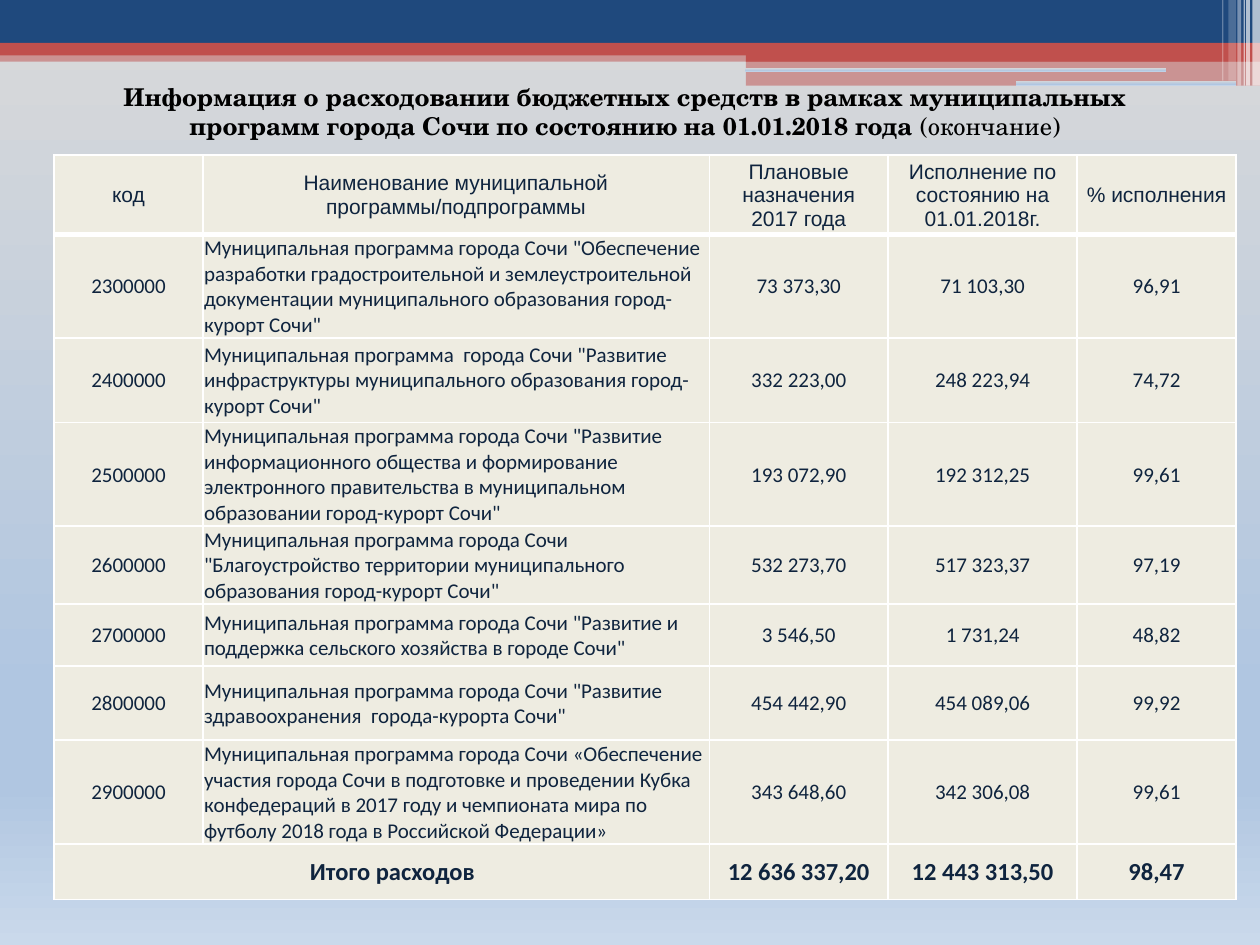
from copy import deepcopy
from typing import NamedTuple

from lxml import etree
from pptx import Presentation
from pptx.dml.color import RGBColor
from pptx.enum import shapes, text
from pptx.oxml.ns import qn
from pptx.util import Inches, Pt

NAVY = RGBColor(0x1F, 0x49, 0x7D)
RED = RGBColor(0xC0, 0x50, 0x4D)
WHITE = RGBColor(0xFF, 0xFF, 0xFF)
BLACK = RGBColor(0, 0, 0)
CREAM = RGBColor(0xEE, 0xEC, 0xE1)
INK = RGBColor(0x0F, 0x24, 0x3E)
SKY = [
    (0, RGBColor(0xD9, 0xD9, 0xD9)),
    (74, RGBColor(0xB0, 0xC6, 0xE1)),
    (83, RGBColor(0xB0, 0xC6, 0xE1)),
    (100, RGBColor(0xCA, 0xD9, 0xEB)),
]
CENTER, LEFT = text.PP_ALIGN.CENTER, text.PP_ALIGN.LEFT


class Band(NamedTuple):
    left: float
    top: float
    width: float
    height: float
    color: RGBColor | None  # None takes the sky gradient
    opacity: int = 100


class Program(NamedTuple):
    code: str
    name: str
    planned: str
    spent: str
    percent: str


BANDS = [
    Band(0, 0.4, 10, 0.09, RED, 50),
    Band(0, 0, 10, 0.34, NAVY),
    Band(0, 0.34, 10, 0.1, RED),
    Band(5.92, 0.39, 4.08, 0.1, RED),
    Band(5.92, 0.48, 4.08, 0.2, RED, 50),
    Band(5.91, 0.54, 3.35, 0.03, None),
    Band(8.06, 0.64, 1.75, 0.04, None),
    Band(9.94, 0, 0.06, 0.68, WHITE, 65),
    Band(9.89, 0, 0.03, 0.68, WHITE, 65),
    Band(9.87, 0, 0.01, 0.68, WHITE, 60),
    Band(9.82, 0, 0.03, 0.68, WHITE, 40),
    Band(9.75, 0, 0.06, 0.64, WHITE, 20),
    Band(9.7, 0, 0.01, 0.64, WHITE, 30),
]
HEADER = Program(
    "код", "Наименование муниципальной программы/подпрограммы",
    "Плановые назначения\n2017 года", "Исполнение по состоянию на 01.01.2018г.",
    "% исполнения")
PROGRAMS = [
    Program("2300000", 'Муниципальная программа города Сочи "Обеспечение разработки '
            'градостроительной и землеустроительной документации муниципального '
            'образования город-курорт Сочи"', "73 373,30", "71 103,30", "96,91"),
    Program("2400000", 'Муниципальная программа  города Сочи "Развитие инфраструктуры '
            'муниципального образования город-курорт Сочи"',
            "332 223,00", "248 223,94", "74,72"),
    Program("2500000", 'Муниципальная программа города Сочи "Развитие информационного '
            'общества и формирование электронного правительства в муниципальном '
            'образовании город-курорт Сочи"', "193 072,90", "192 312,25", "99,61"),
    Program("2600000", 'Муниципальная программа города Сочи "Благоустройство территории '
            'муниципального образования город-курорт Сочи"',
            "532 273,70", "517 323,37", "97,19"),
    Program("2700000", 'Муниципальная программа города Сочи "Развитие и поддержка '
            'сельского хозяйства в городе Сочи"', "3 546,50", "1 731,24", "48,82"),
    Program("2800000", 'Муниципальная программа города Сочи "Развитие здравоохранения  '
            'города-курорта Сочи"', "454 442,90", "454 089,06", "99,92"),
    Program("2900000", "Муниципальная программа города Сочи «Обеспечение участия города "
            "Сочи в подготовке и проведении Кубка конфедераций в 2017 году и чемпионата "
            "мира по футболу 2018 года в Российской Федерации»",
            "343 648,60", "342 306,08", "99,61"),
]
TOTAL = Program("Итого расходов", "", "12 636 337,20", "12 443 313,50", "98,47")
COLUMN_WIDTHS = [1.18, 4.02, 1.42, 1.5, 1.26]
ROW_HEIGHTS = [0.63, 0.78, 0.67, 0.78, 0.59, 0.49, 0.59, 0.59, 0.44]


def fill_sky(fill, element) -> None:
    """Give the fill, which lies inside element, the four-stop vertical gradient."""
    fill.gradient()
    fill.gradient_angle = 270
    stops = element.find(".//" + qn("a:gsLst"))
    for stop in list(stops):
        stops.remove(stop)
    for position, color in SKY:
        stop = etree.SubElement(stops, qn("a:gs"), pos=str(position * 1000))
        etree.SubElement(stop, qn("a:srgbClr"), val=str(color))


def add_band(slide, band: Band) -> None:
    kind = shapes.MSO_SHAPE.RECTANGLE if band.color else shapes.MSO_SHAPE.ROUNDED_RECTANGLE
    shape = slide.shapes.add_shape(kind, *map(Inches, band[:4]))
    shape.shadow.inherit = False
    shape.line.fill.background()
    if band.color is None:
        fill_sky(shape.fill, shape.element)
        return
    shape.fill.solid()
    shape.fill.fore_color.rgb = band.color
    if band.opacity < 100:
        color = shape.element.spPr.find(".//" + qn("a:srgbClr"))
        etree.SubElement(color, qn("a:alpha"), val=str(band.opacity * 1000))


def add_span(para, words: str, font: str, size: float, color: RGBColor, bold: bool) -> None:
    span = para.add_run()
    span.text = words
    span.font.name, span.font.size, span.font.bold = font, Pt(size), bold
    span.font.color.rgb = color


def set_borders(cell, top: float, bottom: float) -> None:
    properties = cell._tc.get_or_add_tcPr()
    widths = {"a:lnL": 1, "a:lnR": 1, "a:lnT": top, "a:lnB": bottom}
    for index, (side, width) in enumerate(widths.items()):
        line = etree.Element(qn(side), w=str(Pt(width)))
        fill = etree.SubElement(line, qn("a:solidFill"))
        etree.SubElement(fill, qn("a:srgbClr"), val=str(WHITE))
        properties.insert(index, line)


def fill_cell(cell, words: str, row: int, column: int, last: int) -> None:
    cell.fill.solid()
    cell.fill.fore_color.rgb = CREAM
    set_borders(cell, top=3 if row == 1 else 1, bottom=3 if row == 0 else 1)
    cell.vertical_anchor = text.MSO_ANCHOR.MIDDLE
    cell.margin_left = cell.margin_right = cell.margin_top = Inches(0.01)
    cell.margin_bottom = 0
    para = cell.text_frame.paragraphs[0]
    para.alignment = LEFT if column == 1 and 0 < row < last else CENTER
    for number, line in enumerate(words.splitlines()):
        if number:
            para.add_line_break()
        add_span(para, line, "Arial" if row == 0 else "Calibri",
                 14 if row == last else 12, INK, row == last)


def add_program_table(slide) -> None:
    rows = [HEADER, *PROGRAMS, TOTAL]
    last = len(rows) - 1
    frame = slide.shapes.add_table(
        len(rows), len(COLUMN_WIDTHS), Inches(0.43), Inches(1.23),
        Inches(sum(COLUMN_WIDTHS)), Inches(sum(ROW_HEIGHTS)))
    table = frame.table
    table.horz_banding = False
    for column, width in zip(table.columns, COLUMN_WIDTHS):
        column.width = Inches(width)
    for row, height in zip(table.rows, ROW_HEIGHTS):
        row.height = Inches(height)
    for r, program in enumerate(rows):
        for c, words in enumerate(program):
            fill_cell(table.cell(r, c), words, r, c, last)
    total_label = table.cell(last, 0)
    total_label.merge(table.cell(last, 1))
    total_label.margin_left = Inches(0.18)


def set_title(slide) -> None:
    title = slide.shapes.title
    title.left, title.top, title.width, title.height = map(Inches, (0.51, 0.6, 8.9, 0.57))
    box = title.text_frame
    box.word_wrap = True
    box.auto_size = text.MSO_AUTO_SIZE.NONE
    box.vertical_anchor = text.MSO_ANCHOR.TOP
    para = box.paragraphs[0]
    para.alignment = CENTER
    para.line_spacing = 1.0
    para.space_before = Pt(0)
    font = "TeX Gyre Schola"
    add_span(para, "Информация о расходовании бюджетных средств в рамках муниципальных "
             "программ города Сочи по состоянию на 01.01.2018 года ", font, 14, BLACK, True)
    add_span(para, "(окончание)", font, 14, BLACK, False)
    slide.shapes._spTree.append(title.element)  # bring to front


def main() -> None:
    deck = Presentation()
    deck.slide_width, deck.slide_height = Inches(10), Inches(7.5)
    slide = deck.slides.add_slide(deck.slide_layouts[5])
    fill_sky(slide.background.fill, slide.element)
    for band in BANDS:
        add_band(slide, band)
    add_program_table(slide)
    set_title(slide)
    deck.save("out.pptx")


if __name__ == "__main__":
    main()
